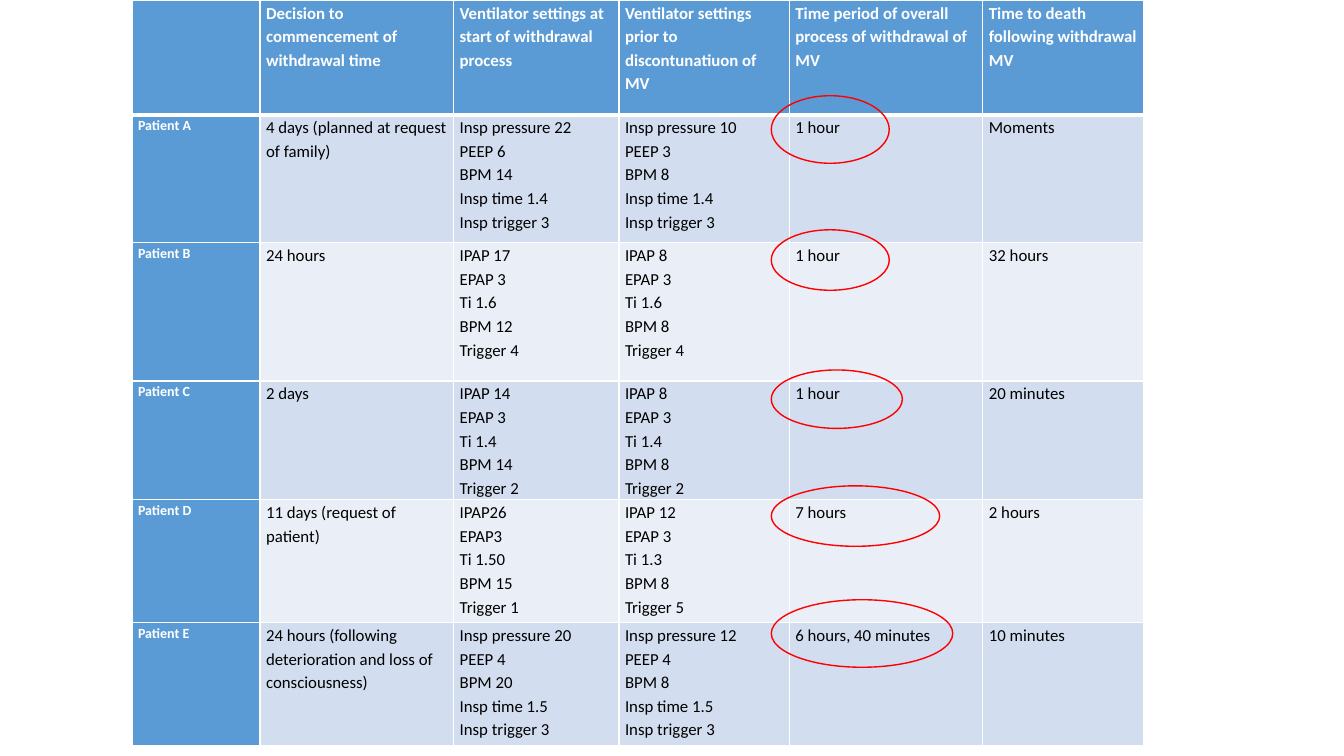
from lxml import etree
from pptx import Presentation
from pptx import util as u
from pptx.dml.color import RGBColor
from pptx.enum import shapes
from pptx.oxml.ns import qn

# Content
HEADINGS = [
    "",
    "Decision to commencement of withdrawal time",
    "Ventilator settings at start of withdrawal process",
    "Ventilator settings prior to discontunatiuon of MV",
    "Time period of overall process of withdrawal of MV",
    "Time to death following withdrawal MV",
]
PATIENTS = [
    ["Patient A", "4 days (planned at request of family)",
     "Insp pressure 22\nPEEP 6\nBPM 14\nInsp time 1.4\nInsp trigger 3",
     "Insp pressure 10\nPEEP 3\nBPM 8\nInsp time 1.4\nInsp trigger 3",
     "1 hour", "Moments"],
    ["Patient B", "24 hours",
     "IPAP 17\nEPAP 3\nTi 1.6\nBPM 12\nTrigger 4",
     "IPAP 8\nEPAP 3\nTi 1.6\nBPM 8\nTrigger 4",
     "1 hour", "32 hours"],
    ["Patient C", "2 days",
     "IPAP 14\nEPAP 3\nTi 1.4\nBPM 14\nTrigger 2",
     "IPAP 8\nEPAP 3\nTi 1.4\nBPM 8\nTrigger 2",
     "1 hour", "20 minutes"],
    ["Patient D", "11 days (request of patient)",
     "IPAP26\nEPAP3\nTi 1.50\nBPM 15\nTrigger 1",
     "IPAP 12\nEPAP 3\nTi 1.3\nBPM 8\nTrigger 5",
     "7 hours", "2 hours"],
    ["Patient E", "24 hours (following deterioration and loss of consciousness)",
     "Insp pressure 20\nPEEP 4\nBPM 20\nInsp time 1.5\nInsp trigger 3",
     "Insp pressure 12\nPEEP 4\nBPM 8\nInsp time 1.5\nInsp trigger 3",
     "6 hours, 40 minutes", "10 minutes"],
]

# Layout in inches
TABLE_LEFT, TABLE_TOP = 1.31, 0
COLUMN_WIDTHS = [1.27, 1.92, 1.64, 1.69, 1.92, 1.59]
ROW_HEIGHTS = [1.14, 1.27, 1.37, 1.18, 1.22, 1.22]
RING_LEFT = 7.65
RINGS = [(0.95, 1.17, 0.67), (2.28, 1.17, 0.6), (3.67, 1.3, 0.58),
         (5.95, 1.8, 0.67), (4.82, 1.67, 0.6)]  # top, width, height

# Colours and formats
WHITE = RGBColor(0xFF, 0xFF, 0xFF)
BLACK = RGBColor(0x00, 0x00, 0x00)
BLUE = RGBColor(0x5B, 0x9B, 0xD5)
BANDS = [RGBColor(0xEA, 0xEF, 0xF7), RGBColor(0xD2, 0xDE, 0xEF)]
RED = RGBColor(0xFF, 0x00, 0x00)
HEADING = {"size": u.Pt(12), "bold": True, "name": "Calibri"}
LABEL = {**HEADING, "size": u.Pt(10)}
BODY = {**HEADING, "bold": False}
MARGINS = {"margin_left": u.Inches(0.06), "margin_right": u.Inches(0.06),
           "margin_top": 0, "margin_bottom": 0}


def set_values(target, values):
    for name, value in values.items():
        setattr(target, name, value)


def add_borders(cell, row):
    """White rules on every side, heavier below the heading row."""
    properties = cell._tc.get_or_add_tcPr()
    widths = {"L": 1, "R": 1, "T": 3 if row == 1 else 1, "B": 3 if row == 0 else 1}
    for side, width in widths.items():
        line = etree.SubElement(properties, qn(f"a:ln{side}"), w=str(u.Pt(width)))
        fill = etree.SubElement(line, qn("a:solidFill"))
        etree.SubElement(fill, qn("a:srgbClr"), val=str(WHITE))


def write_cell(cell, words, style, colour):
    set_values(cell, MARGINS)
    para = cell.text_frame.paragraphs[0]
    para.line_spacing = 1.15
    para.text = words.replace("\n", "\v")
    for span in para.runs:
        set_values(span.font, style)
        span.font.color.rgb = colour
    # Line breaks need the text size too, or they widen the lines
    for line_break in para._p.findall(qn("a:br")):
        etree.SubElement(line_break, qn("a:rPr"), sz=str(int(style["size"].pt * 100)))


def add_patient_table(page):
    rows = [HEADINGS] + PATIENTS
    frame = page.shapes.add_table(
        len(rows), len(HEADINGS), u.Inches(TABLE_LEFT), u.Inches(TABLE_TOP),
        u.Inches(sum(COLUMN_WIDTHS)), u.Inches(sum(ROW_HEIGHTS)))
    table = frame.table
    table.first_col = True
    for column, width in zip(table.columns, COLUMN_WIDTHS):
        column.width = u.Inches(width)
    for r, (words_in_row, height) in enumerate(zip(rows, ROW_HEIGHTS)):
        table.rows[r].height = u.Inches(height)
        for c, words in enumerate(words_in_row):
            cell = table.cell(r, c)
            is_head = r == 0 or c == 0
            style = HEADING if r == 0 else LABEL if c == 0 else BODY
            add_borders(cell, r)
            cell.fill.solid()
            cell.fill.fore_color.rgb = BLUE if is_head else BANDS[r % 2]
            write_cell(cell, words, style, WHITE if is_head else BLACK)


def add_rings(page):
    for top, width, height in RINGS:
        ring = page.shapes.add_shape(
            shapes.MSO_SHAPE.OVAL, u.Inches(RING_LEFT), u.Inches(top),
            u.Inches(width), u.Inches(height))
        ring.shadow.inherit = False
        ring.fill.background()
        ring.line.color.rgb = RED
        ring.line.width = u.Pt(1)


def main():
    deck = Presentation()
    deck.slide_width, deck.slide_height = u.Inches(13.33), u.Inches(7.5)
    page = deck.slides.add_slide(deck.slide_layouts[6])
    add_patient_table(page)
    add_rings(page)
    deck.save("out.pptx")


if __name__ == "__main__":
    main()
